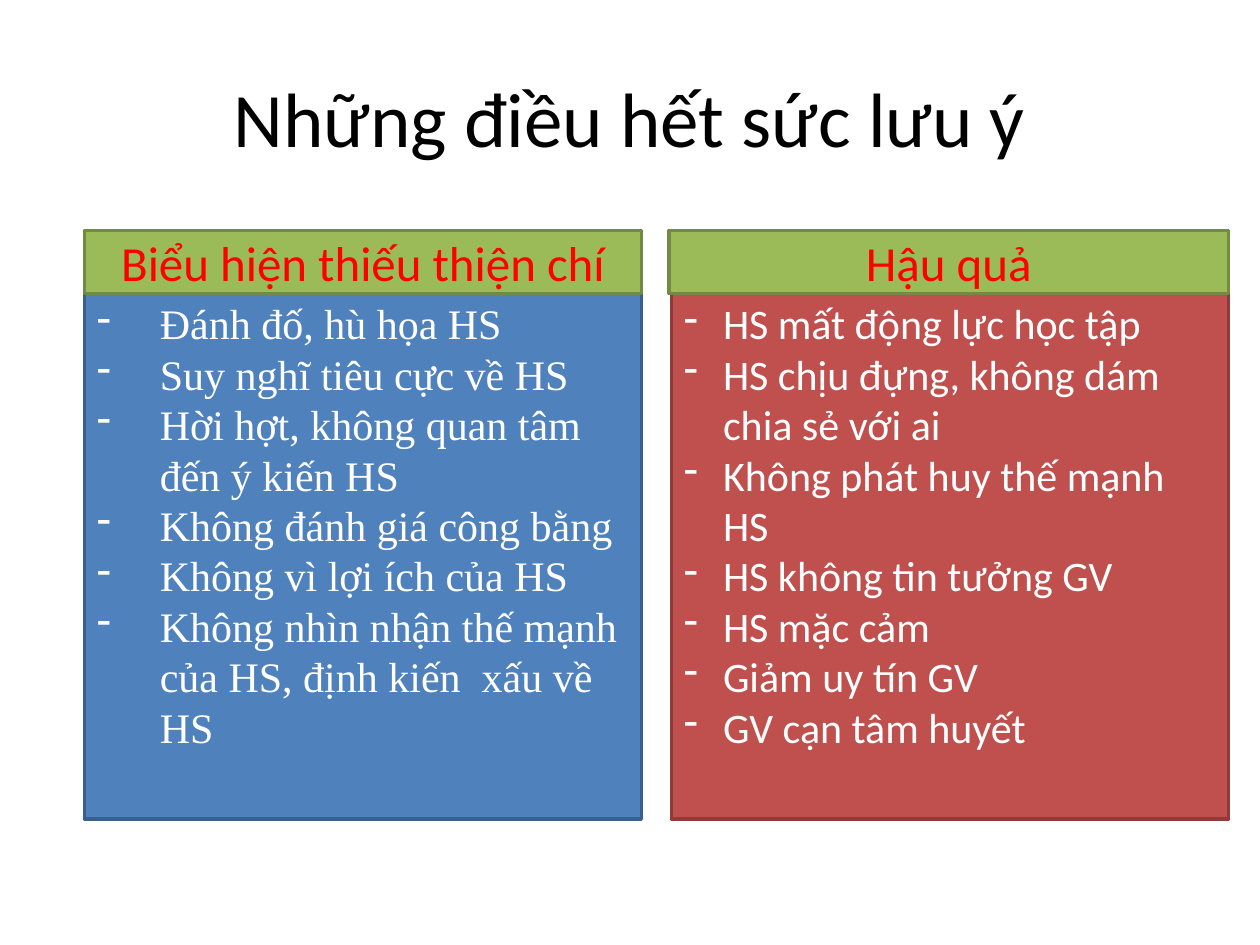
from lxml import etree
from pptx import Presentation
from pptx.dml.color import RGBColor
from pptx.enum.shapes import MSO_SHAPE
from pptx.enum.text import MSO_ANCHOR, PP_ALIGN
from pptx.oxml.ns import qn
from pptx.util import Inches, Pt

RECTANGLE = MSO_SHAPE.RECTANGLE
MIDDLE = MSO_ANCHOR.MIDDLE
LEFT, CENTER = PP_ALIGN.LEFT, PP_ALIGN.CENTER

COLORS = {
    "title": "000000", "body": "FFFFFF", "heading": "FF0000",
    "blue": "4F81BD", "blue_line": "3A5F8C",
    "red": "C0504D", "red_line": "8E3B39",
    "green": "9BBB59", "green_line": "738A42",
}
HEADING_HEIGHT = 0.5
COLUMNS = [
    {
        "box": (0.67, 1.83, 4.42, 4.67), "overhang": 0, "color": "blue",
        "font": "Times New Roman", "indent": 0.5,
        "heading": "Biểu hiện thiếu thiện chí",
        "items": [
            "Đánh đố, hù họa HS",
            "Suy nghĩ tiêu cực về HS",
            "Hời hợt, không quan tâm đến ý kiến HS",
            "Không đánh giá công bằng",
            "Không vì lợi ích của HS",
            "Không nhìn nhận thế mạnh của HS, định kiến  xấu về HS",
        ],
    },
    {
        "box": (5.33, 1.83, 4.42, 4.67), "overhang": 0.02, "color": "red",
        "font": "Calibri", "indent": 0.31,
        "heading": "Hậu quả",
        "items": [
            "HS mất động lực học tập",
            "HS chịu đựng, không dám chia sẻ với ai",
            "Không phát huy thế mạnh HS",
            "HS không tin tưởng GV",
            "HS mặc cảm",
            "Giảm uy tín GV",
            "GV cạn tâm huyết",
        ],
    },
]


def rgb(name):
    """Return the named palette color."""
    return RGBColor.from_string(COLORS[name])


def write_text(shape, lines, size, color, font="Calibri", align=CENTER, indent=None):
    """Write one paragraph per line, with hanging dashes when indent is given."""
    frame = shape.text_frame
    frame.word_wrap = True
    frame.vertical_anchor = MIDDLE
    font_format = {"name": font, "size": Pt(size)}
    for index, line in enumerate(lines):
        para = frame.add_paragraph() if index else frame.paragraphs[0]
        para.alignment = align
        span = para.add_run()
        span.text = line
        for key, value in font_format.items():
            setattr(span.font, key, value)
        span.font.color.rgb = rgb(color)
        if indent:
            add_dash(para, indent)


def add_dash(para, indent):
    """Give a paragraph a hanging dash bullet."""
    properties = para._p.get_or_add_pPr()
    properties.set("marL", str(Inches(indent)))
    properties.set("indent", str(-Inches(indent)))
    etree.SubElement(properties, qn("a:buFontTx"))
    etree.SubElement(properties, qn("a:buChar"), char="-")


def add_panel(page, box, color):
    """Add an outlined rectangle filled with the named color."""
    panel = page.shapes.add_shape(RECTANGLE, *map(Inches, box))
    panel.shadow.inherit = False
    panel.fill.solid()
    panel.fill.fore_color.rgb = rgb(color)
    panel.line.color.rgb = rgb(color + "_line")
    panel.line.width = Pt(2)
    return panel


def add_title(page, box, text):
    """Place the centered page title."""
    title = page.shapes.add_textbox(*map(Inches, box))
    write_text(title, [text], 44, "title")


def add_column(page, box, column):
    """Place a bulleted panel with its heading bar across the top."""
    left, top, width, _ = box
    overhang = column["overhang"]
    body = add_panel(page, box, column["color"])
    write_text(body, column["items"], 24, "body", column["font"], LEFT, column["indent"])
    bar = (left - overhang, top, width + overhang, HEADING_HEIGHT)
    heading = add_panel(page, bar, "green")
    write_text(heading, [column["heading"]], 28, "heading")


def main():
    """Build and save the deck."""
    deck = Presentation()
    deck.slide_width, deck.slide_height = Inches(10), Inches(7.5)
    page = deck.slides.add_slide(deck.slide_layouts[6])
    add_title(page, (0.5, 0.3, 9, 1.25), "Những điều hết sức lưu ý")
    for column in COLUMNS:
        add_column(page, column["box"], column)
    deck.save("out.pptx")


if __name__ == "__main__":
    main()
